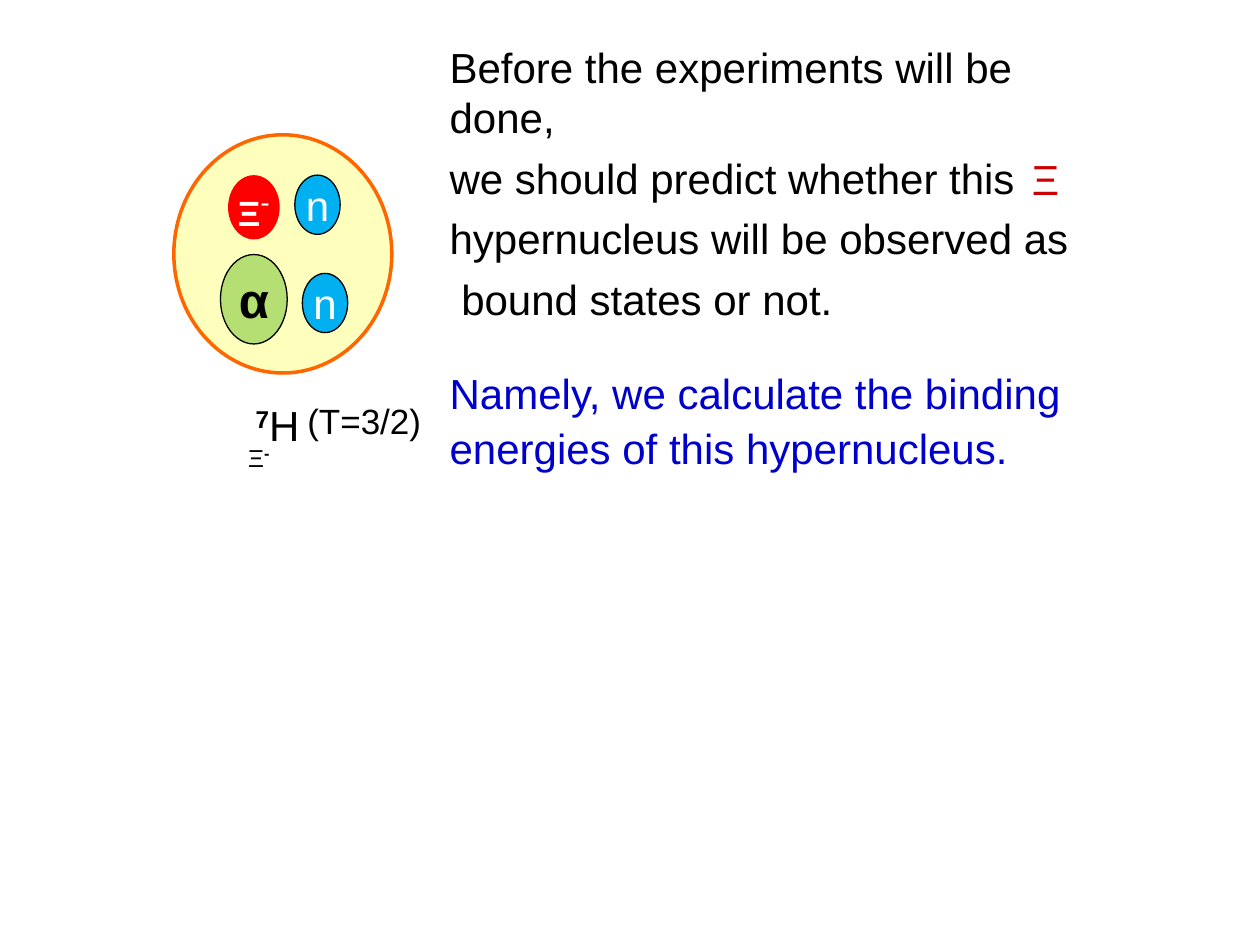
from dataclasses import dataclass
from typing import NamedTuple, Optional

import lxml.etree
import pptx
import pptx.dml.color
import pptx.enum.shapes
import pptx.enum.text
import pptx.oxml.ns
import pptx.util

Inches = pptx.util.Inches
Pt = pptx.util.Pt


@dataclass(frozen=True)
class Theme:
    font: str = "Arial"
    black: str = "000000"
    white: str = "FFFFFF"
    halo: str = "FFFF00"
    rim: str = "FF6600"
    alpha: str = "92D050"
    xi: str = "FF0000"
    neutron: str = "00B0F0"
    emphasis: str = "0000CC"
    xi_accent: str = "CC0000"
    body: int = 24
    isospin: int = 20
    cluster: int = 28
    subscript: int = 14
    charge: int = 16


THEME = Theme()


class Box(NamedTuple):
    left: float
    top: float
    width: float
    height: float


class Run(NamedTuple):
    text: str
    size: int = THEME.body
    color: str = THEME.black
    bold: bool = False
    raised: bool = False


class Line(NamedTuple):
    runs: list
    format: dict = {}


class Particle(NamedTuple):
    box: Box
    fill: str
    runs: list = []
    opacity: int = 100
    outline: Optional[str] = THEME.black
    outline_width: float = 0.75


class Label(NamedTuple):
    box: Box
    lines: list
    wrap: bool = False


def color(code: str):
    return pptx.dml.color.RGBColor.from_string(code)


def write_runs(paragraph, runs: list) -> None:
    for run in runs:
        piece = paragraph.add_run()
        piece.text = run.text
        font_format = {"name": THEME.font, "size": Pt(run.size), "bold": run.bold}
        for key, value in font_format.items():
            setattr(piece.font, key, value)
        piece.font.color.rgb = color(run.color)
        if run.raised:
            piece.font._element.set("baseline", "30000")


def draw_particle(slide, particle: Particle) -> None:
    ellipse = slide.shapes.add_shape(
        pptx.enum.shapes.MSO_SHAPE.OVAL, *map(Inches, particle.box)
    )
    ellipse.shadow.inherit = False
    ellipse.fill.solid()
    ellipse.fill.fore_color.rgb = color(particle.fill)
    if particle.opacity < 100:
        fill_color = ellipse.fill._xPr.find(".//" + pptx.oxml.ns.qn("a:srgbClr"))
        alpha = lxml.etree.SubElement(fill_color, pptx.oxml.ns.qn("a:alpha"))
        alpha.set("val", str(particle.opacity * 1000))
    if particle.outline:
        ellipse.line.color.rgb = color(particle.outline)
        ellipse.line.width = Pt(particle.outline_width)
    else:
        ellipse.line.fill.background()
    frame = ellipse.text_frame
    frame.word_wrap = False
    frame.vertical_anchor = pptx.enum.text.MSO_ANCHOR.MIDDLE
    frame.paragraphs[0].alignment = pptx.enum.text.PP_ALIGN.CENTER
    write_runs(frame.paragraphs[0], particle.runs)


def draw_label(slide, label: Label) -> None:
    frame = slide.shapes.add_textbox(*map(Inches, label.box)).text_frame
    frame.word_wrap = label.wrap
    frame.auto_size = pptx.enum.text.MSO_AUTO_SIZE.SHAPE_TO_FIT_TEXT
    for index, line in enumerate(label.lines):
        paragraph = frame.add_paragraph() if index else frame.paragraphs[0]
        for key, value in line.format.items():
            setattr(paragraph, key, value)
        write_runs(paragraph, line.runs)


NEUTRON_SIZE = (0.36, 0.47)
NEUTRON_RUNS = [Run("n", color=THEME.white)]
SPACED = {"line_spacing": 1.2}
CONCLUSION = {"line_spacing": 1.1, "space_before": Pt(22)}

PARTICLES = [
    Particle(Box(1.38, 1.07, 1.73, 1.89), THEME.halo, opacity=26,
             outline=THEME.rim, outline_width=2),
    Particle(Box(1.75, 2.02, 0.53, 0.71), THEME.alpha,
             [Run("α", THEME.cluster, bold=True)], opacity=68),
    Particle(Box(1.81, 1.39, 0.41, 0.51), THEME.xi,
             [Run("Ξ", THEME.isospin, THEME.white, bold=True),
              Run("-", THEME.cluster, THEME.white, raised=True)], outline=None),
    Particle(Box(2.34, 1.39, *NEUTRON_SIZE), THEME.neutron, NEUTRON_RUNS),
    Particle(Box(2.4, 2.17, *NEUTRON_SIZE), THEME.neutron, NEUTRON_RUNS),
]

LABELS = [
    Label(Box(1.93, 3.12, 0.57, 0.51),
          [Line([Run("7", bold=True, raised=True), Run("H")])]),
    Label(Box(1.87, 3.44, 0.38, 0.34),
          [Line([Run("Ξ", THEME.subscript),
                 Run("-", THEME.charge, bold=True, raised=True)])]),
    Label(Box(2.34, 3.12, 1.11, 0.44), [Line([Run("(T=3/2)", THEME.isospin)])]),
    Label(Box(3.47, 0.28, 5.28, 3.54), [
        Line([Run("Before the experiments will be done,")]),
        Line([Run("we should predict whether this")], SPACED),
        Line([Run("hypernucleus will be observed as")], SPACED),
        Line([Run(" bound states or not.")], SPACED),
        Line([Run("Namely, we calculate the binding energies of this hypernucleus.",
                  color=THEME.emphasis)], CONCLUSION),
    ], wrap=True),
    Label(Box(8.09, 1.17, 0.42, 0.5), [Line([Run("Ξ", color=THEME.xi_accent)])]),
]


def main() -> None:
    deck = pptx.Presentation()
    deck.slide_width = Inches(10)
    deck.slide_height = Inches(7.5)
    slide = deck.slides.add_slide(deck.slide_layouts[6])
    for particle in PARTICLES:
        draw_particle(slide, particle)
    for label in LABELS:
        draw_label(slide, label)
    deck.save("out.pptx")


if __name__ == "__main__":
    main()
